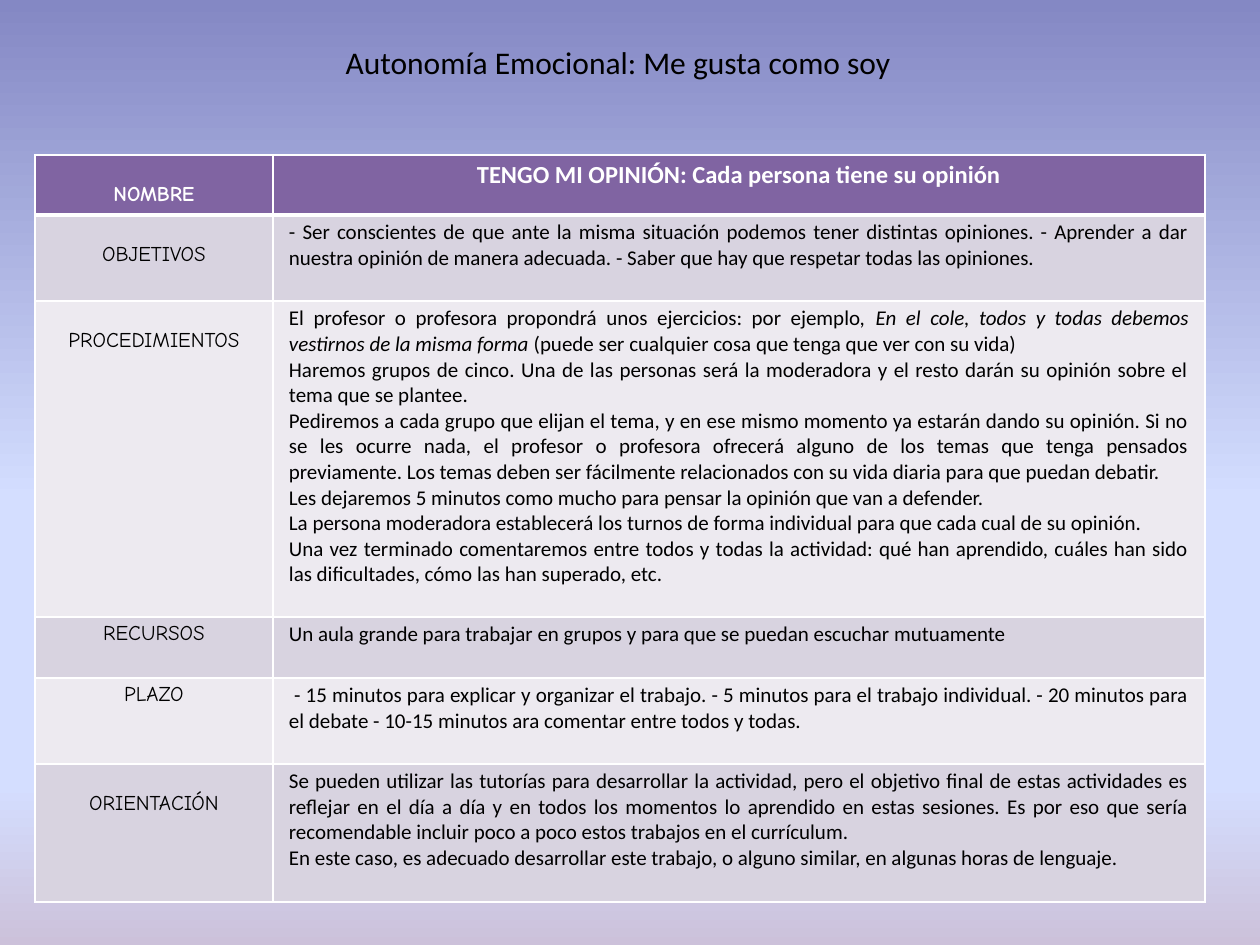
from dataclasses import dataclass

from lxml import etree
from pptx import Presentation
from pptx.dml.color import RGBColor
from pptx.enum import text
from pptx.oxml.ns import qn
from pptx.util import Pt

EMU_PER_PX = 914400 / 126


@dataclass(frozen=True)
class Theme:
    body_font: str = "Calibri"
    label_font: str = "Comic Neue"
    dark: str = "000000"
    light: str = "FFFFFF"
    header: str = "8064A2"
    bands: tuple = ("D8D3E0", "EDEAF0")
    backdrop: tuple = ((0, "8488C4"), (53, "D4DEFF"), (83, "D4DEFF"), (100, "CCC1DA"))
    title_size: int = 18
    heading_size: int = 14
    body_size: int = 12
    rule: int = 1
    heavy_rule: int = 3


THEME = Theme()
CENTER, JUSTIFY = text.PP_ALIGN.CENTER, text.PP_ALIGN.JUSTIFY
LOWERED = 28   # top margin of a label that sits one line down
TOP = 5        # usual top margin
COLUMNS = (238, 932)

# Row: height, label, top margin of the label, paragraphs of (text, italic) runs
ROWS = [
    (60, "NOMBRE", LOWERED, [[("TENGO MI OPINIÓN: Cada persona tiene su opinión", False)]]),
    (86, "OBJETIVOS", LOWERED, [
        [("- Ser conscientes de que ante la misma situación podemos tener distintas opiniones. "
          "- Aprender a dar nuestra opinión de manera adecuada. "
          "- Saber que hay que respetar todas las opiniones.", False)]]),
    (316, "PROCEDIMIENTOS", LOWERED, [
        [("El profesor o profesora propondrá unos ejercicios: por ejemplo, ", False),
         ("En el cole, todos y todas debemos vestirnos de la misma forma ", True),
         ("(puede ser cualquier cosa que tenga que ver con su vida)", False)],
        [("Haremos grupos de cinco. Una de las personas será la moderadora y el resto darán "
          "su opinión sobre el tema que se plantee.", False)],
        [("Pediremos a cada grupo que elijan el tema, y en ese mismo momento ya estarán dando "
          "su opinión. Si no se les ocurre nada, el profesor o profesora ofrecerá alguno de los "
          "temas que tenga pensados previamente. Los temas deben ser fácilmente relacionados "
          "con su vida diaria para que puedan debatir. ", False)],
        [("Les dejaremos 5 minutos como mucho para pensar la opinión que van a defender.", False)],
        [("La persona moderadora establecerá los turnos de forma individual para que cada cual "
          "de su opinión.", False)],
        [("Una vez terminado comentaremos entre todos y todas la actividad: qué han aprendido, "
          "cuáles han sido las dificultades, cómo las han superado, etc. ", False)]]),
    (61, "RECURSOS", TOP, [
        [("Un aula grande para trabajar en grupos y para que se puedan escuchar mutuamente",
          False)]]),
    (86, "PLAZO", TOP, [
        [(" - 15 minutos para explicar y organizar el trabajo. - 5 minutos para el trabajo "
          "individual. - 20 minutos para el debate - 10-15 minutos ara comentar entre todos "
          "y todas. ", False)]]),
    (138, "ORIENTACIÓN", LOWERED, [
        [("Se pueden utilizar las tutorías para desarrollar la actividad, pero el objetivo final "
          "de estas actividades es reflejar en el día a día y en todos los momentos lo aprendido "
          "en estas sesiones. Es por eso que sería recomendable incluir poco a poco estos "
          "trabajos en el currículum. ", False)],
        [("En este caso, es adecuado desarrollar este trabajo, o alguno similar, en algunas "
          "horas de lenguaje.", False)]]),
]


def px(n):
    return round(n * EMU_PER_PX)


def add_run(p, content, font, size, color, bold=False, italic=False):
    r = p.add_run()
    r.text = content
    r.font.name, r.font.size = font, Pt(size)
    r.font.bold, r.font.italic = bold, italic
    r.font.color.rgb = RGBColor.from_string(color)


def paint_background(s):
    fill = s.background.fill
    fill.gradient()
    fill.gradient_angle = 270  # counter-clockwise: top to bottom
    stops = s.background._cSld.find(".//" + qn("a:gsLst"))
    for old in list(stops):
        stops.remove(old)
    for percent, color in THEME.backdrop:
        stop = etree.SubElement(stops, qn("a:gs"), pos=str(percent * 1000))
        etree.SubElement(stop, qn("a:srgbClr"), val=color)


def add_title(s, content):
    sp = s.shapes.title
    sp.left, sp.top, sp.width, sp.height = map(px, (333, 37, 615, 50))
    tf = sp.text_frame
    tf.word_wrap = True
    tf.auto_size = text.MSO_AUTO_SIZE.NONE
    tf.vertical_anchor = text.MSO_ANCHOR.TOP
    p = tf.paragraphs[0]
    p.alignment = text.PP_ALIGN.LEFT
    add_run(p, content, THEME.body_font, THEME.title_size, THEME.dark)


def set_borders(cell, row):
    # The rule between the header and the body is heavier
    widths = {"L": THEME.rule, "R": THEME.rule,
              "T": THEME.heavy_rule if row == 1 else THEME.rule,
              "B": THEME.heavy_rule if row == 0 else THEME.rule}
    tc_pr = cell._tc.get_or_add_tcPr()
    for i, (side, width) in enumerate(widths.items()):
        ln = etree.Element(qn("a:ln" + side), w=str(Pt(width)))
        fill = etree.SubElement(ln, qn("a:solidFill"))
        etree.SubElement(fill, qn("a:srgbClr"), val=THEME.light)
        tc_pr.insert(i, ln)


def fill_cell(cell, row, paragraphs, font, size, align, top=TOP):
    header = row == 0
    cell.margin_left = cell.margin_right = px(16)
    cell.margin_top, cell.margin_bottom = px(top), px(TOP)
    cell.fill.solid()
    cell.fill.fore_color.rgb = RGBColor.from_string(
        THEME.header if header else THEME.bands[(row - 1) % 2])
    set_borders(cell, row)
    tf = cell.text_frame
    for i, runs in enumerate(paragraphs):
        p = tf.add_paragraph() if i else tf.paragraphs[0]
        p.alignment = align
        for content, italic in runs:
            add_run(p, content, font, size, THEME.light if header else THEME.dark,
                    bold=header, italic=italic)


def add_activity_table(s):
    heights = [row[0] for row in ROWS]
    table = s.shapes.add_table(len(ROWS), len(COLUMNS), px(35), px(155),
                               px(sum(COLUMNS)), px(sum(heights))).table
    for column, width in zip(table.columns, COLUMNS):
        column.width = px(width)
    for i, (height, label, label_top, paragraphs) in enumerate(ROWS):
        table.rows[i].height = px(height)
        fill_cell(table.cell(i, 0), i, [[(label, False)]], THEME.label_font,
                  THEME.body_size, CENTER, label_top)
        fill_cell(table.cell(i, 1), i, paragraphs, THEME.body_font,
                  THEME.body_size if i else THEME.heading_size,
                  JUSTIFY if i else CENTER)


def main():
    prs = Presentation()
    prs.slide_width, prs.slide_height = px(1260), px(945)
    s = prs.slides.add_slide(prs.slide_layouts[5])  # title only
    paint_background(s)
    add_activity_table(s)
    add_title(s, "Autonomía Emocional: Me gusta como soy")
    prs.save("out.pptx")


if __name__ == "__main__":
    main()
